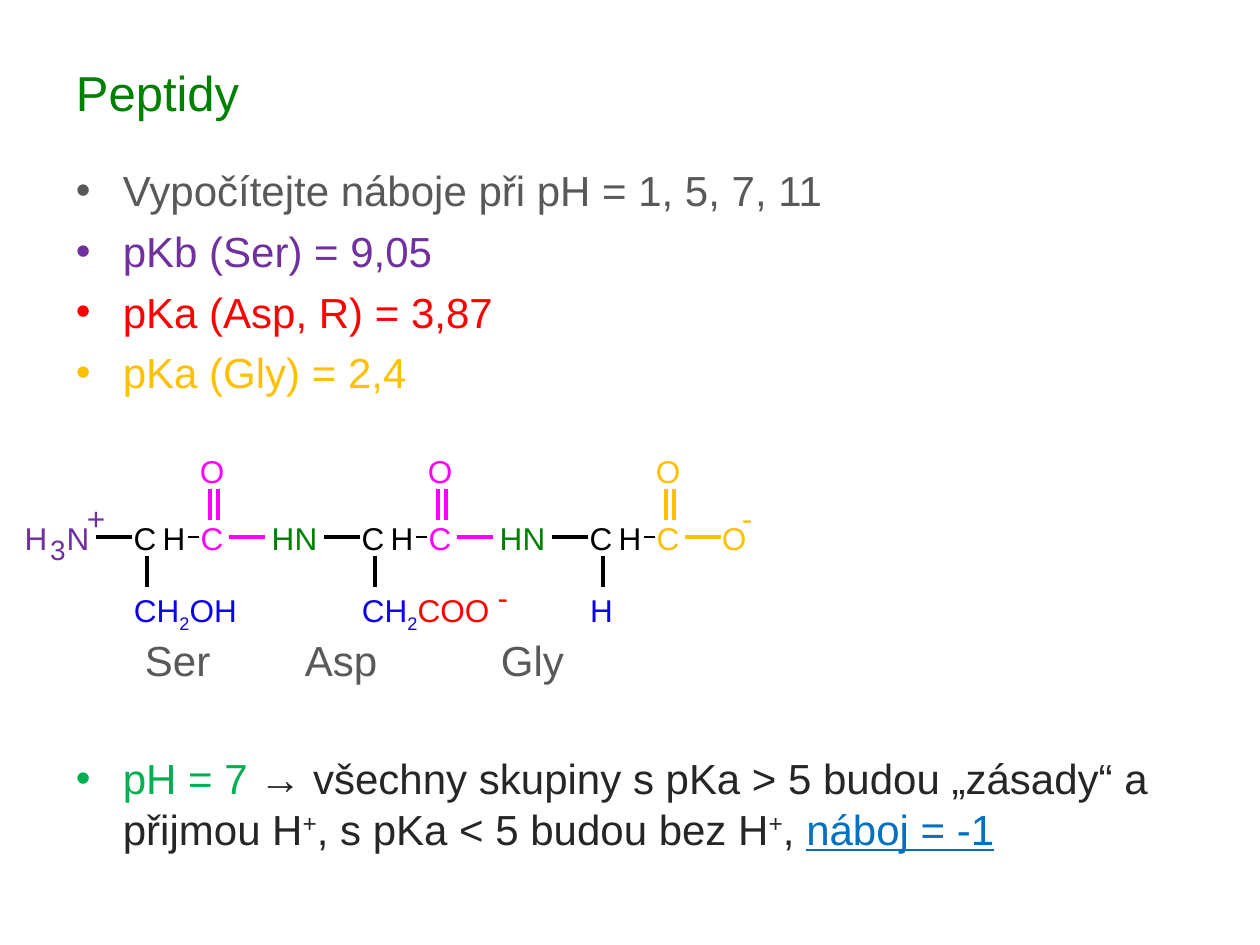
from dataclasses import dataclass

from lxml import etree
from pptx import Presentation
from pptx.dml.color import RGBColor
from pptx.enum.shapes import MSO_CONNECTOR
from pptx.enum.text import MSO_ANCHOR, PP_ALIGN
from pptx.oxml.ns import qn
from pptx.util import Emu, Pt

STRAIGHT = MSO_CONNECTOR.STRAIGHT
LEFT, CENTER = PP_ALIGN.LEFT, PP_ALIGN.CENTER
TOP, MIDDLE = MSO_ANCHOR.TOP, MSO_ANCHOR.MIDDLE
PX = 914400 / 126


@dataclass(frozen=True)
class Theme:
    font: str = "Arial"
    title_size: int = 28
    body_size: int = 24
    atom_size: int = 18
    count_size: int = 16
    bond: float = 2.25
    thin_bond: float = 1.5
    green: str = "008000"
    gray: str = "595959"
    dark: str = "262626"
    purple: str = "7030A0"
    red: str = "FF0000"
    gold: str = "FFC000"
    lime: str = "00B050"
    sky: str = "0070C0"
    blue: str = "0C01EF"
    pink: str = "FF00FF"
    black: str = "000000"


T = Theme()

# A run is (text, colour, optional font extras); a paragraph is a list of runs.
TITLE = [[("Peptidy", T.green)]]
TASKS = [
    [("Vypočítejte náboje při pH = 1, 5, 7, 11", T.gray)],
    [("pKb (Ser) = 9,05", T.purple)],
    [("pKa (Asp, R) = 3,87", T.red)],
    [("pKa (Gly) = 2,4", T.gold)],
]
SUPER, SUB = {"baseline": 30}, {"baseline": -25}
CONCLUSION = [[
    ("pH = 7 ", T.lime),
    ("→ všechny skupiny s pKa > 5 budou „zásady“ a přijmou H", T.dark),
    ("+", T.dark, SUPER),
    (", s pKa < 5 budou bez H", T.dark),
    ("+", T.dark, SUPER),
    (", ", T.dark),
    ("náboj = -1", T.sky, {"underline": True}),
]]
NAMES = [("Ser", 145), ("Asp", 305), ("Gly", 501)]
RESIDUES = [
    {"amine": T.purple, "hydrogen_x": 36, "carbonyl": T.pink,
     "side": [("CH", T.blue), ("2", T.blue, SUB), ("OH", T.blue)]},
    {"amine": T.green, "hydrogen_x": 55, "carbonyl": T.pink,
     "side": [("CH", T.blue), ("2", T.blue, SUB), ("COO", T.red)]},
    {"amine": T.green, "hydrogen_x": 55, "carbonyl": T.gold,
     "side": [("H", T.blue)]},
]
CHARGES = [("+", T.purple, 96, 499), ("-", T.red, 503, 578), ("-", T.gold, 747, 499)]

RESIDUE_PITCH = 228
CHAIN_TOP, OXYGEN_TOP, SIDE_TOP, COUNT_TOP = 519, 452, 591, 533
BOND_Y = 537
CARBON_X, HYDROGEN_X, CARBONYL_X, NITROGEN_X = 145, 174, 212, 78
END_OXYGEN_X = 278
ATOM_WIDTH, ATOM_HEIGHT = 24, 38


def px(value):
    return Emu(round(value * PX))


def add_bullet(paragraph):
    properties = paragraph._p.get_or_add_pPr()
    properties.set("marL", str(px(47)))
    properties.set("indent", str(-px(47)))
    font = etree.SubElement(properties, qn("a:buFont"))
    font.set("typeface", T.font)
    etree.SubElement(properties, qn("a:buChar")).set("char", "•")


def add_text(shapes, paragraphs, left, top, width, height, *, size=T.body_size,
             align=LEFT, anchor=TOP, wrap=True, bullets=False):
    frame = shapes.add_textbox(px(left), px(top), px(width), px(height)).text_frame
    frame.margin_left = frame.margin_right = frame.margin_top = frame.margin_bottom = 0
    frame.word_wrap = wrap
    frame.vertical_anchor = anchor
    for index, runs in enumerate(paragraphs):
        paragraph = frame.add_paragraph() if index else frame.paragraphs[0]
        paragraph.alignment = align
        if index:
            paragraph.space_before = Pt(5.8)
        if bullets:
            add_bullet(paragraph)
        for text, color, *extras in runs:
            options = extras[0] if extras else {}
            run = paragraph.add_run()
            run.text = text
            run.font.name = T.font
            run.font.size = Pt(size)
            run.font.color.rgb = RGBColor.from_string(color)
            if "underline" in options:
                run.font.underline = True
            if "baseline" in options:
                run._r.get_or_add_rPr().set("baseline", str(options["baseline"] * 1000))


def add_atom(shapes, symbol, color, center, top, size=T.atom_size):
    add_text(shapes, [[(symbol, color)]], center - ATOM_WIDTH / 2, top,
             ATOM_WIDTH, ATOM_HEIGHT, size=size, align=CENTER, wrap=False)


def add_bond(shapes, start, end, color, width=T.bond):
    bond = shapes.add_connector(STRAIGHT, *map(px, start + end))
    bond.line.color.rgb = RGBColor.from_string(color)
    bond.line.width = Pt(width)
    etree.SubElement(bond._element.spPr, qn("a:effectLst"))


def add_residue(slide, residue, x):
    """Draw one amino acid, shifted right by x from the first one."""
    shapes = slide.shapes.add_group_shape().shapes
    amine, carbonyl = residue["amine"], residue["carbonyl"]
    add_bond(shapes, (x + 96, BOND_Y), (x + 132, BOND_Y), T.black)
    add_bond(shapes, (x + 188, BOND_Y), (x + 199, BOND_Y), T.black, T.thin_bond)
    add_bond(shapes, (x + 147, 556), (x + 147, 587), T.black)
    add_bond(shapes, (x + 229, BOND_Y), (x + 265, BOND_Y), carbonyl)
    for offset in (210, 218):
        add_bond(shapes, (x + offset, 520), (x + offset, 489), carbonyl)
    for symbol, color, center, top in [
        ("H", amine, residue["hydrogen_x"], CHAIN_TOP),
        ("N", amine, NITROGEN_X, CHAIN_TOP),
        ("C", T.black, CARBON_X, CHAIN_TOP),
        ("H", T.black, HYDROGEN_X, CHAIN_TOP),
        ("C", carbonyl, CARBONYL_X, CHAIN_TOP),
        ("O", carbonyl, CARBONYL_X, OXYGEN_TOP),
    ]:
        add_atom(shapes, symbol, color, x + center, top)
    add_text(shapes, [residue["side"]], x + 134, SIDE_TOP, 130, ATOM_HEIGHT,
             size=T.atom_size)
    if residue is RESIDUES[0]:
        add_atom(shapes, "3", amine, x + 58, COUNT_TOP, T.count_size)
    if residue is RESIDUES[-1]:
        add_atom(shapes, "O", carbonyl, x + END_OXYGEN_X, CHAIN_TOP)


def main():
    presentation = Presentation()
    presentation.slide_width, presentation.slide_height = px(1260), px(945)
    slide = presentation.slides.add_slide(presentation.slide_layouts[6])
    shapes = slide.shapes

    add_text(shapes, TITLE, 76, 38, 1108, 107, size=T.title_size, anchor=MIDDLE)
    add_text(shapes, TASKS, 76, 165, 1108, 226, bullets=True)
    for name, left in NAMES:
        add_text(shapes, [[(name, T.gray)]], left, 635, 90, 50)
    add_text(shapes, CONCLUSION, 76, 753, 1108, 100, bullets=True)
    for index, residue in enumerate(RESIDUES):
        add_residue(slide, residue, index * RESIDUE_PITCH)
    for sign, color, center, top in CHARGES:
        add_atom(shapes, sign, color, center, top)

    presentation.save("out.pptx")


if __name__ == "__main__":
    main()
